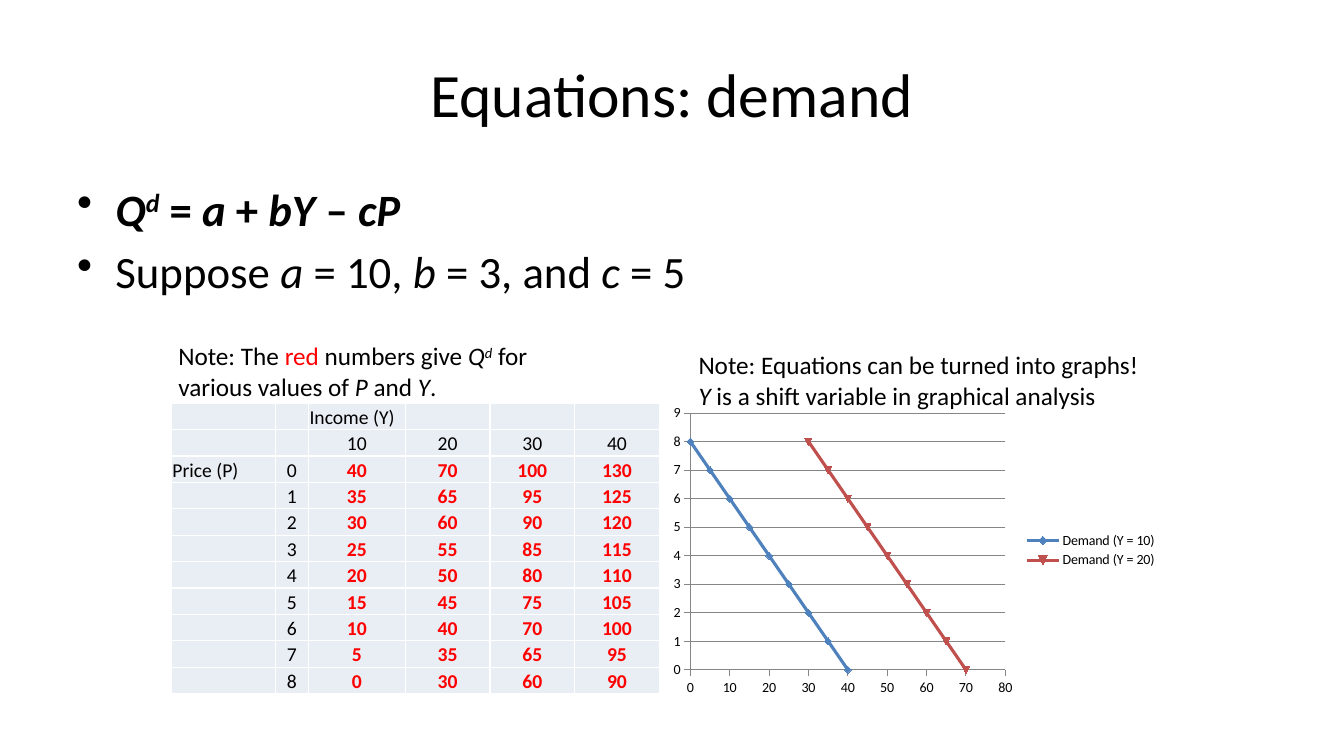
import pptx
import pptx.chart.data
import pptx.dml.color
import pptx.enum.chart
import pptx.enum.text
import pptx.oxml
import pptx.oxml.ns
import pptx.util

INK = {"text": "000000", "red": "FF0000", "cell": "E9EDF4", "edge": "FFFFFF",
       "grid": "868686", "low": "4F81BD", "high": "C0504D"}
FACE = "Calibri"
WIDE, TALL = 13.33, 7.5
A, B, C = 10, 3, 5
PRICES, INCOMES = range(9), (10, 20, 30, 40)
COLS = (1.03, 0.33, 0.96, 0.84, 0.84, 0.84)
ALIGN = pptx.enum.text.PP_ALIGN
ANCHOR = pptx.enum.text.MSO_ANCHOR
INCH = pptx.util.Inches


def tint(key):
    """Return the named colour."""
    return pptx.dml.color.RGBColor.from_string(INK[key])


def demand(price, income):
    """Return the quantity demanded."""
    return A + B * income - C * price


def style(font, size, key="text", bold=False):
    """Set the face, size, colour and weight of a font."""
    font.name, font.size, font.bold = FACE, pptx.util.Pt(size), bold
    font.color.rgb = tint(key)


def write(para, parts, size, bold=False):
    """Fill a paragraph with (text, marks): i italic, ^ raised, r red."""
    style(para.font, size, bold=bold)
    for text, marks in parts:
        run = para.add_run()
        run.text = text
        if "i" in marks:
            run.font.italic = True
        if "r" in marks:
            run.font.color.rgb = tint("red")
        if "^" in marks:
            run.font._element.set("baseline", "30000")


def frame(slide, box, anchor=ANCHOR.TOP):
    """Add a wrapping text box and return its frame."""
    body = slide.shapes.add_textbox(*map(INCH, box)).text_frame
    body.word_wrap, body.vertical_anchor = True, anchor
    return body


def title(slide, box, text):
    """Place the centred heading."""
    para = frame(slide, box, ANCHOR.MIDDLE).paragraphs[0]
    para.alignment = ALIGN.CENTER
    write(para, [(text, "")], 44)


def bullets(slide, box, items):
    """Place the bulleted lines, each with its weight."""
    body = frame(slide, box)
    for at, (parts, bold) in enumerate(items):
        para = body.add_paragraph() if at else body.paragraphs[0]
        para.space_before = pptx.util.Pt(6.4)
        write(para, parts, 32, bold)
        props = para._p.get_or_add_pPr()
        props.set("marL", str(INCH(0.38)))
        props.set("indent", str(INCH(-0.38)))
        mark = pptx.oxml.parse_xml(
            f'<a:buChar {pptx.oxml.ns.nsdecls("a")} char="•"/>')
        props.find(pptx.oxml.ns.qn("a:defRPr")).addprevious(mark)


def note(slide, box, parts):
    """Place a note above an exhibit."""
    write(frame(slide, box).paragraphs[0], parts, 18)


def edges(cell):
    """Draw thin lines around a cell."""
    props = cell._tc.get_or_add_tcPr()
    for at, side in enumerate(("lnL", "lnR", "lnT", "lnB")):
        line = pptx.oxml.parse_xml(
            f'<a:{side} {pptx.oxml.ns.nsdecls("a")} w="12700"><a:solidFill>'
            f'<a:srgbClr val="{INK["edge"]}"/></a:solidFill></a:{side}>')
        props.insert(at, line)


def grid(slide, box):
    """Place the table of demand by price and income."""
    rows = [["", "", "Income (Y)", "", "", ""], ["", "", *INCOMES]]
    rows += [["" if p else "Price (P)", p, *(demand(p, y) for y in INCOMES)]
             for p in PRICES]
    table = slide.shapes.add_table(len(rows), len(COLS), *map(INCH, box)).table
    for col, wide in zip(table.columns, COLS):
        col.width = INCH(wide)
    for r, row in enumerate(rows):
        table.rows[r].height = INCH(box[3] / len(rows))
        for c, value in enumerate(row):
            cell = table.cell(r, c)
            cell.margin_left = cell.margin_right = cell.margin_top = INCH(0.01)
            cell.margin_bottom = 0
            cell.vertical_anchor = ANCHOR.BOTTOM
            cell.fill.solid()
            cell.fill.fore_color.rgb = tint("cell")
            edges(cell)
            para = cell.text_frame.paragraphs[0]
            hot = r > 1 and c > 1
            style(para.font, 14, "red" if hot else "text", hot)
            if value != "":
                para.add_run().text = str(value)
            if isinstance(value, int):
                para.alignment = ALIGN.CENTER


def graph(slide, box):
    """Place the chart of two demand lines."""
    data = pptx.chart.data.XyChartData()
    for income in INCOMES[:2]:
        line = data.add_series(f"Demand (Y = {income})")
        for price in PRICES:
            line.add_data_point(demand(price, income), price)
    kind = pptx.enum.chart.XL_CHART_TYPE.XY_SCATTER_LINES
    chart = slide.shapes.add_chart(kind, *map(INCH, box), data).chart
    style(chart.font, 10)
    chart.has_title = False
    chart.has_legend = True
    chart.legend.position = pptx.enum.chart.XL_LEGEND_POSITION.RIGHT
    chart.legend.include_in_layout = False
    chart.plots[0].vary_by_categories = False
    for at, (line, key) in enumerate(zip(chart.plots[0].series, ("low", "high"))):
        line.smooth = False
        line.format.line.color.rgb = tint(key)
        line.format.line.width = pptx.util.Pt(2.25)
        line._element.find(pptx.oxml.ns.qn("c:idx")).set("val", str(at + 1))
    for axis, top, step in ((chart.category_axis, 80, 10), (chart.value_axis, 9, 1)):
        axis.minimum_scale, axis.maximum_scale, axis.major_unit = 0, top, step
        axis.major_tick_mark = pptx.enum.chart.XL_TICK_MARK.OUTSIDE
        axis.format.line.color.rgb = tint("grid")
        axis.has_major_gridlines = axis is chart.value_axis or top == 9
    chart.value_axis.major_gridlines.format.line.color.rgb = tint("grid")


def main():
    """Build the slide and save it."""
    deck = pptx.Presentation()
    deck.slide_width, deck.slide_height = INCH(WIDE), INCH(TALL)
    slide = deck.slides.add_slide(deck.slide_layouts[6])
    side = WIDE / 20
    title(slide, (side, TALL * 0.04, WIDE * 0.9, TALL / 6), "Equations: demand")
    bullets(slide, (side, 1.75, WIDE * 0.9, TALL * 0.66), [
        ([("Q", "i"), ("d", "i^"), (" = ", ""), ("a", "i"), (" + ", ""),
          ("bY", "i"), (" – ", ""), ("cP", "i")], True),
        ([("Suppose ", ""), ("a", "i"), (f" = {A}, ", ""), ("b", "i"),
          (f" = {B}, and ", ""), ("c", "i"), (f" = {C}", "")], False)])
    grid(slide, (1.7, 4, sum(COLS), 2.88))
    graph(slide, (6.58, 3.96, 5, 3))
    note(slide, (1.67, 3.33, 4, 0.71), [
        ("Note: The ", ""), ("red", "r"), (" numbers give ", ""), ("Q", "i"),
        ("d", "i^"), (" for various values of ", ""), ("P", "i"),
        (" and ", ""), ("Y", "i"), (".", "")])
    note(slide, (6.83, 3.42, 4.67, 0.71), [
        ("Note: Equations can be turned into graphs! ", ""), ("Y", "i"),
        (" is a shift variable in graphical analysis", "")])
    deck.save("out.pptx")


if __name__ == "__main__":
    main()
